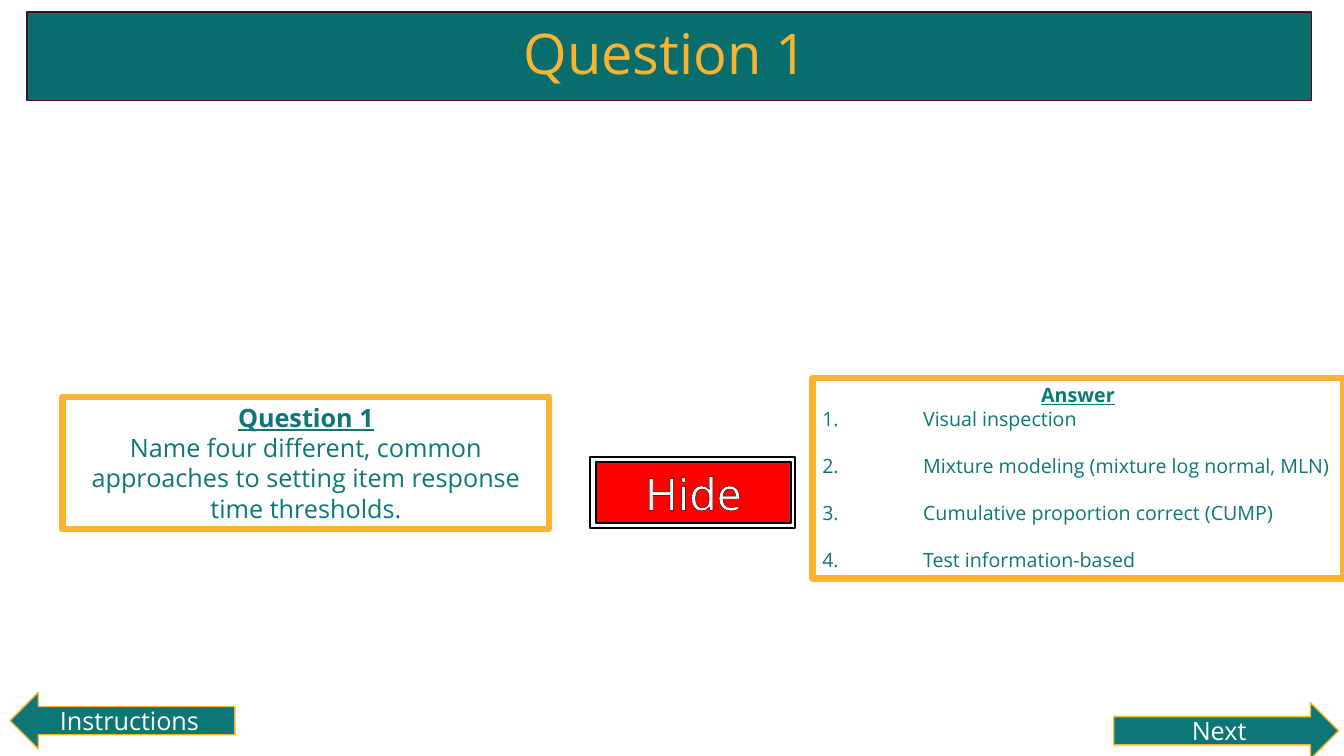
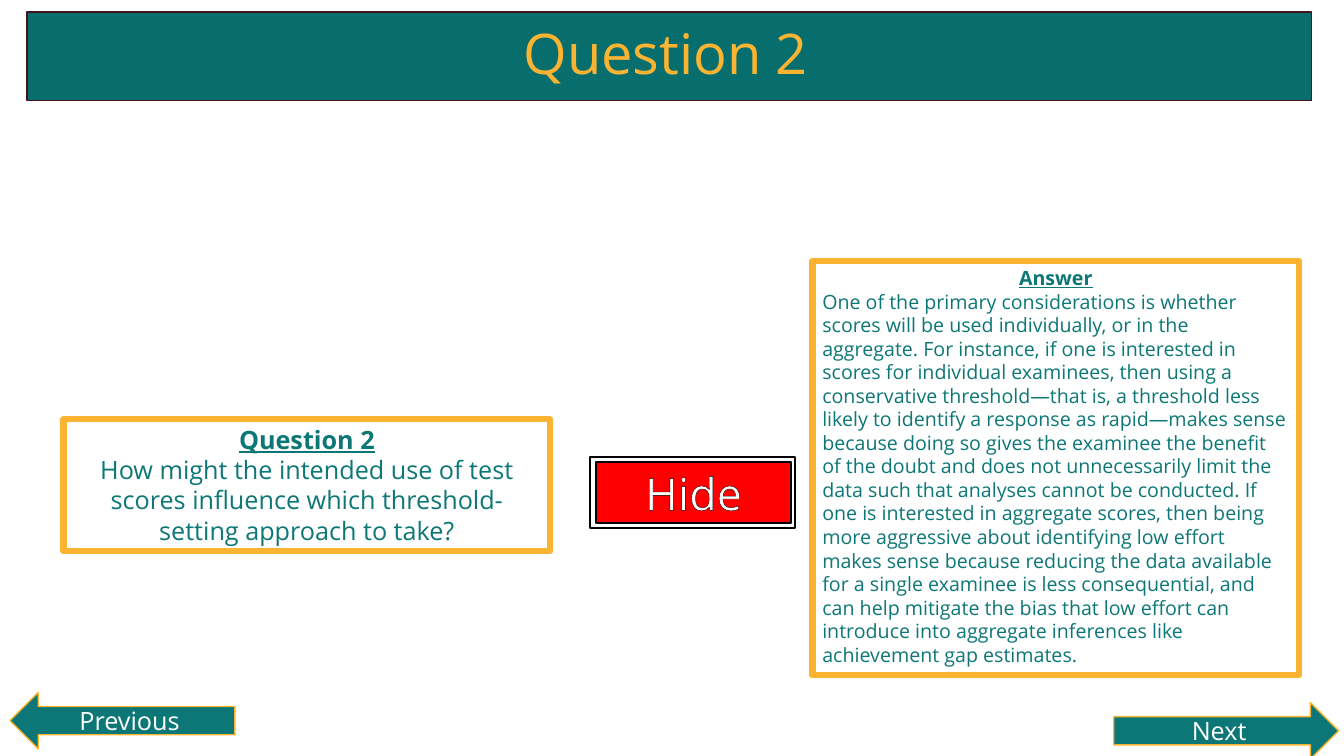
"""Build two quiz slides, each with a question, an answer and navigation arrows."""
from lxml.etree import SubElement
from pptx import Presentation
from pptx.dml.color import RGBColor
from pptx.enum.shapes import MSO_SHAPE
from pptx.enum.text import MSO_ANCHOR, MSO_AUTO_SIZE, PP_ALIGN
from pptx.oxml import parse_xml
from pptx.oxml.ns import nsdecls, qn
from pptx.util import Pt

BAND = RGBColor(0x07, 0x6E, 0x6D)
BAND_EDGE = RGBColor(0x46, 0x10, 0x1F)
TEAL = RGBColor(0x0C, 0x77, 0x76)
GOLD = RGBColor(0xFA, 0xB4, 0x32)
RED = RGBColor(0xFF, 0x00, 0x00)
WHITE = RGBColor(0xFF, 0xFF, 0xFF)
BLACK = RGBColor(0x00, 0x00, 0x00)

FONT = "Open Sans"
BAND_BOX = (19.44, 8.64, 917.28, 63.36)
TITLE_BOX = (23.04, 15.84, 905.04, 48.24)
BACK_BOX = (7.2, 494.64, 160.56, 40.32)
NEXT_BOX = (795.6, 501.84, 160.56, 40.32)
FRAME_BOX = (421.5, 326.5, 146.2, 50.4)
BUTTON_BOX = (425.5, 329.8, 139.7, 43.9)
LIST_INDENT = 72
LIST_GAP = 16.8

QUESTIONS = [
    {
        "title": "Question 1",
        "back": "Instructions",
        "question": "Name four different, common approaches to setting item response time thresholds.",
        "question_box": (44.64, 283.68, 347.76, 94.32),
        "answer": [
            "Visual inspection",
            "Mixture modeling (mixture log normal, MLN)",
            "Cumulative proportion correct (CUMP)",
            "Test information-based",
        ],
        "answer_box": (580.32, 270, 379.44, 143.28),
    },
    {
        "title": "Question 2",
        "back": "Previous",
        "question": "How might the intended use of test scores influence which threshold-setting approach to take?",
        "question_box": (45.36, 299.52, 347.76, 94.32),
        "answer": [
            "One of the primary considerations is whether scores will be used individually, "
            "or in the aggregate. For instance, if one is interested in scores for individual "
            "examinees, then using a conservative threshold—that is, a threshold less likely "
            "to identify a response as rapid—makes sense because doing so gives the examinee "
            "the benefit of the doubt and does not unnecessarily limit the data such that "
            "analyses cannot be conducted. If one is interested in aggregate scores, then "
            "being more aggressive about identifying low effort makes sense because reducing "
            "the data available for a single examinee is less consequential, and can help "
            "mitigate the bias that low effort can introduce into aggregate inferences like "
            "achievement gap estimates.",
        ],
        "answer_box": (580.32, 186.48, 347.76, 295.92),
    },
]


def place(shape, box):
    for name, value in zip(("left", "top", "width", "height"), box):
        setattr(shape, name, Pt(value))


def add_box(shapes, kind, box, fill, line, weight):
    sp = shapes.add_shape(kind, *map(Pt, box))
    sp.shadow.inherit = False
    if fill is None:
        sp.fill.background()
    else:
        sp.fill.solid()
        sp.fill.fore_color.rgb = fill
    sp.line.color.rgb = line
    sp.line.width = Pt(weight)
    return sp


def write(p, text, size, color, align=PP_ALIGN.CENTER, **extra):
    p.alignment = align
    r = p.add_run()
    r.text = text
    for name, value in {"name": FONT, "size": Pt(size), **extra}.items():
        setattr(r.font, name, value)
    r.font.color.rgb = color
    return r


def label(sp, text, size):
    tf = sp.text_frame
    tf.vertical_anchor = MSO_ANCHOR.MIDDLE
    return write(tf.paragraphs[0], text, size, WHITE)


def number(p, first):
    pPr = p._p.get_or_add_pPr()
    pPr.set("marL", str(Pt(LIST_INDENT)))
    pPr.set("indent", str(-Pt(LIST_INDENT)))
    if not first:
        p.space_before = Pt(LIST_GAP)
    SubElement(pPr, qn("a:buFont"), typeface="+mj-lt")
    SubElement(pPr, qn("a:buAutoNum"), type="arabicPeriod")


def add_card(slide, box, heading, body, size, align):
    sp = add_box(slide.shapes, MSO_SHAPE.RECTANGLE, box, None, GOLD, 4.5)
    tf = sp.text_frame
    tf.word_wrap = True
    tf.auto_size = MSO_AUTO_SIZE.SHAPE_TO_FIT_TEXT
    tf.vertical_anchor = MSO_ANCHOR.TOP
    write(tf.paragraphs[0], heading, size, TEAL, bold=True, underline=True)
    for i, text in enumerate(body):
        p = tf.add_paragraph()
        write(p, text, size, TEAL, align)
        if len(body) > 1:
            number(p, i == 0)


def add_hide_button(slide):
    group = slide.shapes.add_group_shape()
    add_box(group.shapes, MSO_SHAPE.RECTANGLE, FRAME_BOX, WHITE, BLACK, 1.5)
    sp = add_box(group.shapes, MSO_SHAPE.RECTANGLE, BUTTON_BOX, RED, BLACK, 1.5)
    r = label(sp, "Hide", 32)
    outline = parse_xml(
        f'<a:ln {nsdecls("a")} w="{Pt(0.75)}"><a:solidFill>'
        f'<a:srgbClr val="{BLACK}"/></a:solidFill></a:ln>'
    )
    r.font._element.insert(0, outline)


def set_title(slide, text):
    tf = slide.shapes.title.text_frame
    tf.auto_size = MSO_AUTO_SIZE.NONE
    tf.vertical_anchor = MSO_ANCHOR.MIDDLE
    p = tf.paragraphs[0]
    p.line_spacing = 0.9
    write(p, text, 40, GOLD)


def add_question(prs, layout, item):
    slide = prs.slides.add_slide(layout)
    set_title(slide, item["title"])
    arrows = [
        (MSO_SHAPE.LEFT_ARROW, BACK_BOX, item["back"]),
        (MSO_SHAPE.RIGHT_ARROW, NEXT_BOX, "Next"),
    ]
    for kind, box, text in arrows:
        label(add_box(slide.shapes, kind, box, TEAL, GOLD, 1), text, 18)
    add_card(slide, item["question_box"], item["title"], [item["question"]], 18, PP_ALIGN.CENTER)
    add_card(slide, item["answer_box"], "Answer", item["answer"], 14, PP_ALIGN.LEFT)
    add_hide_button(slide)
    return slide


def main():
    prs = Presentation()
    prs.slide_width, prs.slide_height = Pt(960), Pt(540)
    layout = prs.slide_layouts.get_by_name("Title Only")
    place(layout.placeholders[0], TITLE_BOX)
    slides = [add_question(prs, layout, item) for item in QUESTIONS]
    band = add_box(slides[0].shapes, MSO_SHAPE.RECTANGLE, BAND_BOX, BAND, BAND_EDGE, 1)
    layout.shapes.element.insert(2, band.element)
    prs.save("out.pptx")


if __name__ == "__main__":
    main()
